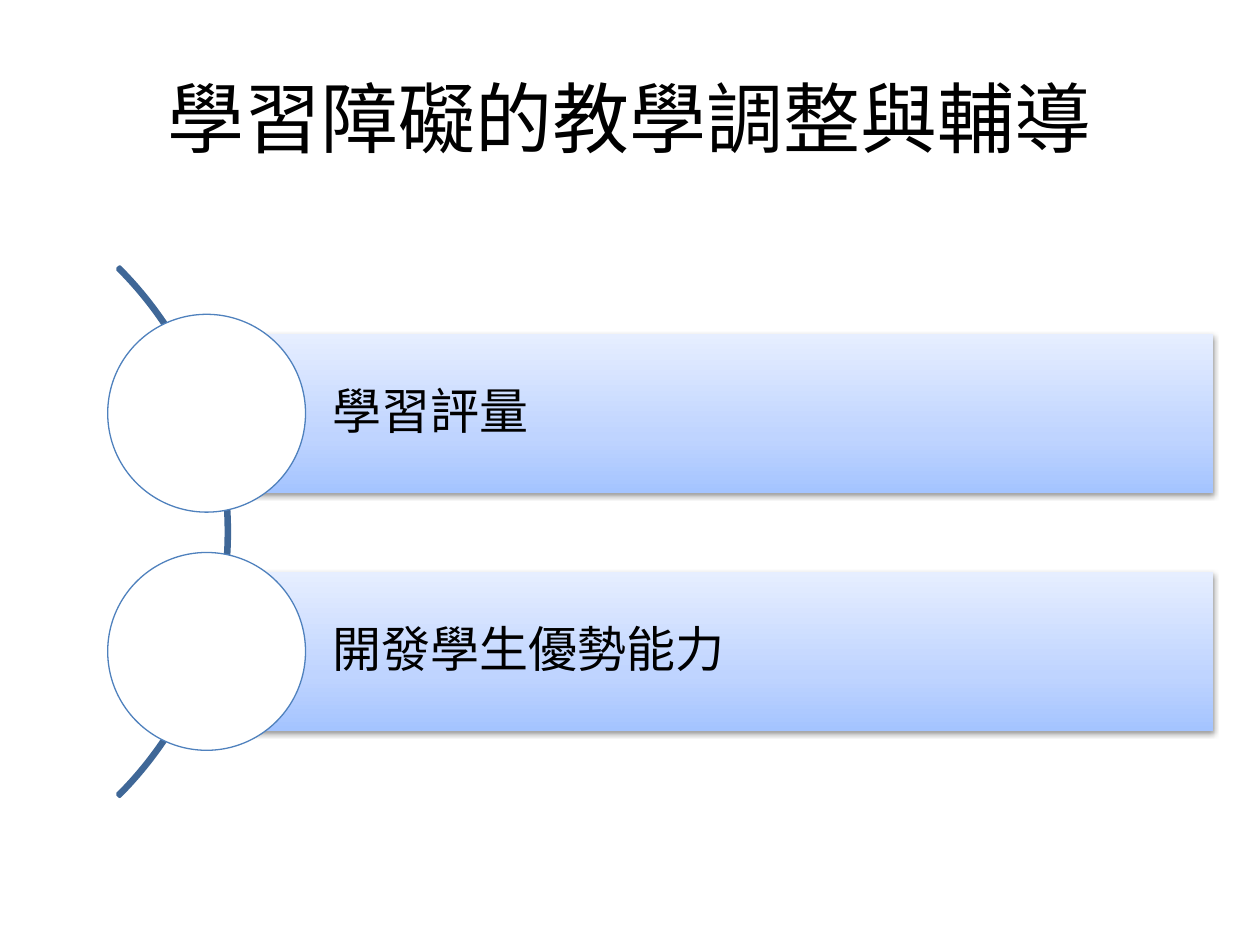
from copy import deepcopy
from dataclasses import dataclass

from lxml import etree
from pptx import Presentation
from pptx import util as u
from pptx.dml.color import RGBColor
from pptx.enum import shapes, text
from pptx.oxml.ns import qn

COLORS = {
    "text": "000000",
    "arc": "3F6797",
    "circle": "FFFFFF",
    "circle_edge": "4F81BD",
    "shadow": "000000",
    "bar_low": "A4C4FF",
    "bar_mid": "BFD4FF",
    "bar_high": "E6EEFF",
}
BAR_STOPS = [(0, "bar_low"), (0.35, "bar_mid"), (1, "bar_high")]
CJK_FONT = "Noto Sans CJK SC"

BAR_LEFT, BAR_WIDTH, BAR_HEIGHT = 1.64, 7.99, 1.26
FIRST_BAR_TOP, BAR_STEP = 2.65, 1.89
CIRCLE_SIZE = 1.57

TITLE_FRAME = {
    "word_wrap": True,
    "vertical_anchor": text.MSO_ANCHOR.MIDDLE,
}
BAR_FRAME = TITLE_FRAME | {
    "margin_left": u.Inches(1),
    "margin_top": u.Inches(0.08),
    "margin_right": u.Inches(0.08),
    "margin_bottom": u.Inches(0.08),
}


@dataclass
class Topic:
    label: str
    top: float


def rgb(key: str) -> RGBColor:
    return RGBColor.from_string(COLORS[key])


def apply(target, values: dict) -> None:
    for name, value in values.items():
        setattr(target, name, value)


def add_shape(slide, kind, left: float, top: float, width: float, height: float):
    shape = slide.shapes.add_shape(kind, *map(u.Inches, (left, top, width, height)))
    shape.shadow.inherit = False
    return shape


def write_text(shape, words: str, frame: dict, paragraph: dict, font: dict) -> None:
    apply(shape.text_frame, frame)
    line = shape.text_frame.paragraphs[0]
    apply(line, paragraph)
    run = line.add_run()
    run.text = words
    apply(run.font, font)
    run.font.color.rgb = rgb("text")
    # East Asian typeface follows the Latin one
    latin = run.font._element.find(qn("a:latin"))
    latin.addnext(latin.makeelement(qn("a:ea"), {"typeface": CJK_FONT}))


def fill_gradient(shape) -> None:
    shape.fill.gradient()
    shape.fill.gradient_angle = 90
    stop_list = shape._element.spPr.find(".//" + qn("a:gsLst"))
    stop_list.append(deepcopy(stop_list[-1]))
    for stop, (position, color) in zip(shape.fill.gradient_stops, BAR_STOPS):
        stop.position = position
        stop.color.rgb = rgb(color)


def drop_shadow(shape) -> None:
    effects = shape._element.spPr.find(qn("a:effectLst"))
    shadow = etree.SubElement(effects, qn("a:outerShdw"), {
        "blurRad": str(u.Pt(3.1)), "dist": str(u.Pt(1.6)),
        "dir": "5400000", "rotWithShape": "0"})
    color = etree.SubElement(shadow, qn("a:srgbClr"), val=COLORS["shadow"])
    etree.SubElement(color, qn("a:alpha"), val="38000")


def draw_title(slide, words: str) -> None:
    title = slide.shapes.add_textbox(*map(u.Inches, (0.5, 0.3, 9, 1.25)))
    write_text(title, words, TITLE_FRAME,
               {"alignment": text.PP_ALIGN.CENTER},
               {"size": u.Pt(44), "name": CJK_FONT})


def draw_arc(slide) -> None:
    arc = add_shape(slide, shapes.MSO_SHAPE.BLOCK_ARC, -4.12, 1.25, 5.94, 5.94)
    for index, value in enumerate((189, 27, 0.004)):
        arc.adjustments[index] = value
    arc.fill.background()
    arc.line.color.rgb = rgb("arc")
    arc.line.width = u.Pt(2)


def draw_topic(slide, topic: Topic) -> None:
    # Bar with its label
    bar = add_shape(slide, shapes.MSO_SHAPE.RECTANGLE,
                    BAR_LEFT, topic.top, BAR_WIDTH, BAR_HEIGHT)
    fill_gradient(bar)
    bar.line.fill.background()
    drop_shadow(bar)
    write_text(bar, topic.label, BAR_FRAME,
               {"alignment": text.PP_ALIGN.LEFT, "line_spacing": 0.9},
               {"size": u.Pt(28), "name": "Calibri"})

    # Circle centred on the left end of the bar
    circle = add_shape(slide, shapes.MSO_SHAPE.OVAL,
                       BAR_LEFT - CIRCLE_SIZE / 2,
                       topic.top + (BAR_HEIGHT - CIRCLE_SIZE) / 2,
                       CIRCLE_SIZE, CIRCLE_SIZE)
    circle.fill.solid()
    circle.fill.fore_color.rgb = rgb("circle")
    circle.line.color.rgb = rgb("circle_edge")
    circle.line.width = u.Pt(0.75)


def main() -> None:
    deck = Presentation()
    apply(deck, {"slide_width": u.Inches(10), "slide_height": u.Inches(7.5)})
    slide = deck.slides.add_slide(deck.slide_layouts[6])

    draw_title(slide, "學習障礙的教學調整與輔導")
    draw_arc(slide)
    for index, label in enumerate(("學習評量", "開發學生優勢能力")):
        draw_topic(slide, Topic(label, FIRST_BAR_TOP + index * BAR_STEP))

    deck.save("out.pptx")


if __name__ == "__main__":
    main()
